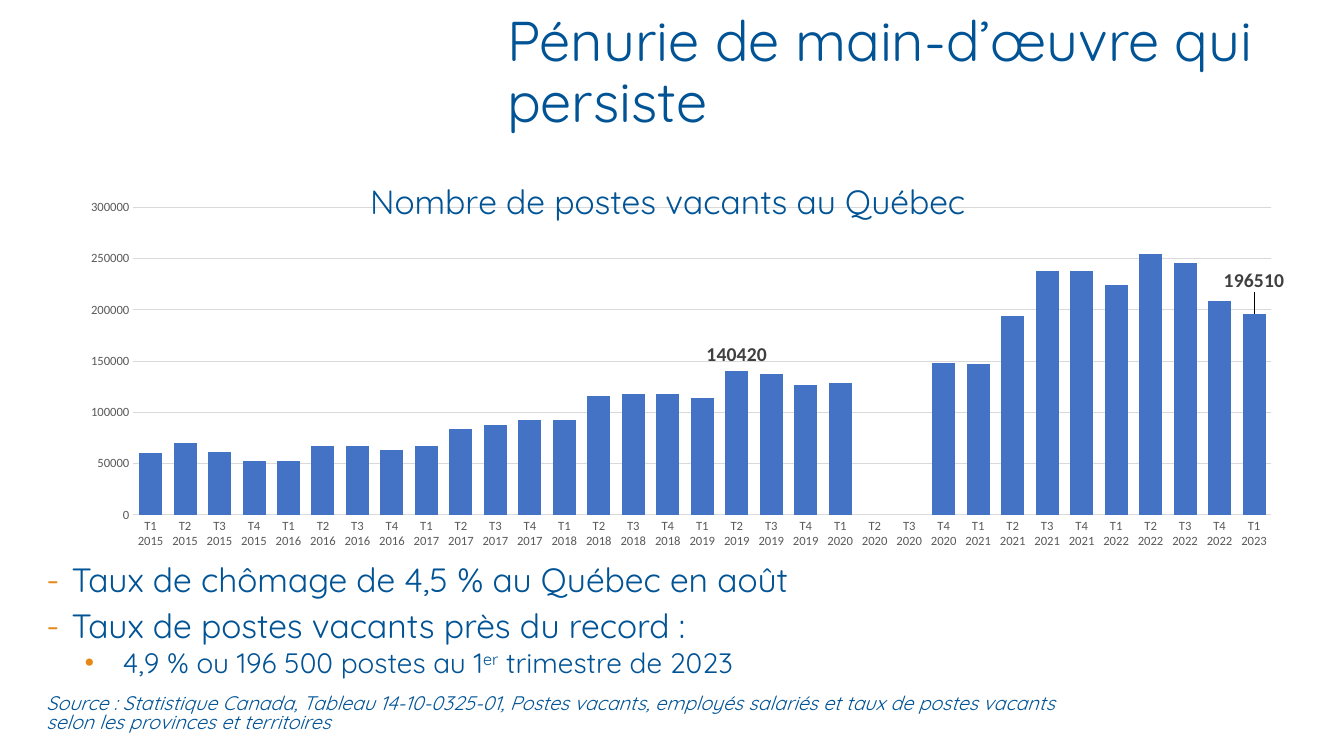
from dataclasses import dataclass

from lxml import etree
from pptx import Presentation
from pptx.chart.data import CategoryChartData
from pptx.dml.color import RGBColor
from pptx.enum.chart import XL_CHART_TYPE, XL_LABEL_POSITION, XL_TICK_MARK
from pptx.enum.text import MSO_ANCHOR, MSO_AUTO_SIZE, PP_ALIGN
from pptx.oxml import parse_xml
from pptx.oxml.ns import nsdecls, qn
from pptx.util import Inches, Pt

COLUMNS = XL_CHART_TYPE.COLUMN_CLUSTERED
OUTSIDE_END = XL_LABEL_POSITION.OUTSIDE_END
NO_TICK = XL_TICK_MARK.NONE
TOP, MIDDLE = MSO_ANCHOR.TOP, MSO_ANCHOR.MIDDLE
NO_AUTOFIT = MSO_AUTO_SIZE.NONE
LEFT = PP_ALIGN.LEFT


@dataclass(frozen=True)
class Theme:
    heading_font: str = "Quicksand"
    chart_font: str = "Calibri"
    blue: str = "005395"
    orange: str = "E58818"
    bar: str = "4472C4"
    grid: str = "D9D9D9"
    axis_text: str = "595959"
    label_text: str = "404040"
    black: str = "000000"
    white: str = "FFFFFF"
    title_size: int = 40
    bullet_size: int = 24
    sub_bullet_size: int = 20
    source_size: int = 14
    chart_size: int = 10
    axis_size: int = 9
    label_size: int = 14


THEME = Theme()

VACANCIES = [
    60505, 70300, 61445, 52205,
    52930, 66975, 66785, 63430,
    67720, 83820, 87435, 92455,
    92850, 116335, 118405, 117865,
    114215, 140420, 137530, 126730,
    128410, None, None, 148460,
    146865, 194145, 238050, 238140,
    224370, 254475, 246230, 208795,
    196510,
]
QUARTERS = [f"T{i % 4 + 1} {2015 + i // 4}" for i in range(len(VACANCIES))]
LABELLED_QUARTERS = ("T2 2019", "T1 2023")

# Text pieces, size, level, left margin, hanging, bullet, space before, space after
BODY = [
    (["Taux de chômage de 4,5 % au Québec en août"],
     THEME.bullet_size, 0, 0.25, 0.25, "-", 0, 0),
    (["Taux de postes vacants près du record :"],
     THEME.bullet_size, 0, 0.25, 0.25, "-", 10, 0),
    (["4,9 % ou 196 500 postes au 1", "er", " trimestre de 2023"],
     THEME.sub_bullet_size, 1, 0.76, 0.38, "•", 5, 6),
    (["Source : Statistique Canada, Tableau 14-10-0325-01, Postes vacants, "
      "employés salariés et taux de postes vacants \vselon les provinces et territoires"],
     THEME.source_size, 1, 0, 0, None, 6, 0),
]


def style_font(font, name, size, color):
    font.name = name
    font.size = Pt(size)
    font.color.rgb = RGBColor.from_string(color)


def place(shape, left, top, width, height):
    shape.left, shape.top = Inches(left), Inches(top)
    shape.width, shape.height = Inches(width), Inches(height)


def set_bullet(paragraph, left, hanging, character):
    properties = paragraph._p.get_or_add_pPr()
    properties.set("marL", str(Inches(left)))
    properties.set("indent", str(-Inches(hanging)))
    if character is None:
        etree.SubElement(properties, qn("a:buNone"))
        return
    color = etree.SubElement(properties, qn("a:buClr"))
    etree.SubElement(color, qn("a:srgbClr")).set("val", THEME.orange)
    etree.SubElement(properties, qn("a:buFont")).set("typeface", THEME.heading_font)
    etree.SubElement(properties, qn("a:buChar")).set("char", character)


def fill_title(title):
    place(title, 4.93, 0.16, 8.29, 1.15)
    frame = title.text_frame
    frame.text = "Pénurie de main-d’œuvre qui persiste"
    frame.word_wrap = True
    frame.auto_size = NO_AUTOFIT
    frame.vertical_anchor = MIDDLE
    paragraph = frame.paragraphs[0]
    paragraph.alignment = LEFT
    paragraph.line_spacing = 0.9
    style_font(paragraph.runs[0].font, THEME.heading_font, THEME.title_size, THEME.blue)


def fill_body(body):
    place(body, 0.36, 5.57, 10.8, 1.77)
    body.fill.solid()
    body.fill.fore_color.rgb = RGBColor.from_string(THEME.white)
    frame = body.text_frame
    frame.word_wrap = True
    frame.auto_size = NO_AUTOFIT
    frame.vertical_anchor = TOP
    for index, (pieces, size, level, left, hanging, bullet, before, after) in enumerate(BODY):
        paragraph = frame.add_paragraph() if index else frame.paragraphs[0]
        paragraph.text = pieces[0]
        for piece in pieces[1:]:
            paragraph.add_run().text = piece
        set_bullet(paragraph, left, hanging, bullet)
        paragraph.level = level
        paragraph.line_spacing = 0.8
        paragraph.space_before, paragraph.space_after = Pt(before), Pt(after)
        for run in paragraph.runs:
            style_font(run.font, THEME.heading_font, size, THEME.blue)
            run.font.italic = size == THEME.source_size
            if run.text == "er":
                run._r.get_or_add_rPr().set("baseline", "30000")


def set_layout(parent, index, settings):
    """Give a chart part a manual layout, as the child at the given index."""
    for old_layout in parent.findall(qn("c:layout")):
        parent.remove(old_layout)
    layout = etree.Element(qn("c:layout"))
    manual = etree.SubElement(layout, qn("c:manualLayout"))
    for name, value in settings.items():
        etree.SubElement(manual, qn(f"c:{name}")).set("val", str(value))
    parent.insert(index, layout)


def style_axis(axis):
    axis.major_tick_mark = axis.minor_tick_mark = NO_TICK
    style_font(axis.tick_labels.font, THEME.chart_font, THEME.axis_size, THEME.axis_text)


def style_line(line):
    line.color.rgb = RGBColor.from_string(THEME.grid)
    line.width = Pt(0.75)


def label_points(series):
    series.data_labels.show_value = False
    for quarter in LABELLED_QUARTERS:
        label = series.points[QUARTERS.index(quarter)].data_label
        style_font(label.font, THEME.chart_font, THEME.label_size, THEME.label_text)
        label.font.bold = True
        label.position = OUTSIDE_END
    # Leader line from the raised last label to its column
    series.data_labels._element.append(parse_xml(
        f'<c:extLst {nsdecls("c", "a")}><c:ext uri="{{CE6537A1-D6FC-4f65-9D91-7224C49458BB}}" '
        'xmlns:c15="http://schemas.microsoft.com/office/drawing/2012/chart">'
        '<c15:showLeaderLines val="1"/></c:ext></c:extLst>'))


def add_vacancy_chart(slide):
    data = CategoryChartData()
    data.categories = QUARTERS
    data.add_series("Postes vacants", VACANCIES)
    chart = slide.shapes.add_chart(
        COLUMNS, Inches(0.36), Inches(1.48), Inches(12.5), Inches(4.29), data).chart
    style_font(chart.font, THEME.chart_font, THEME.chart_size, THEME.black)
    chart.has_legend = False

    # Title
    title_frame = chart.chart_title.text_frame
    title_frame.text = "Nombre de postes vacants au Québec"
    title_font = title_frame.paragraphs[0].runs[0].font
    style_font(title_font, THEME.heading_font, THEME.bullet_size, THEME.blue)
    title_font.bold = False

    # Axes
    for axis in (chart.category_axis, chart.value_axis):
        style_axis(axis)
    style_line(chart.category_axis.format.line)
    chart.value_axis.format.line.fill.background()
    chart.value_axis.minimum_scale, chart.value_axis.maximum_scale = 0, 300000
    chart.value_axis.major_unit = 50000
    style_line(chart.value_axis.major_gridlines.format.line)

    # Columns and labels
    plot = chart.plots[0]
    plot.gap_width = 50
    plot.vary_by_categories = False
    series = plot.series[0]
    series.format.fill.solid()
    series.format.fill.fore_color.rgb = RGBColor.from_string(THEME.bar)
    label_points(series)

    # Positions inside the chart
    root = chart._chartSpace
    set_layout(root.xpath("c:chart/c:title")[0], 1,
               {"xMode": "edge", "yMode": "edge", "x": 0.26, "y": 0.05})
    set_layout(root.xpath("c:chart/c:plotArea")[0], 0,
               {"layoutTarget": "inner", "xMode": "edge", "yMode": "edge",
                "x": 0.077, "y": 0.135, "w": 0.903, "h": 0.711})
    set_layout(root.xpath(".//c:dLbl")[-1], 1, {"x": 0, "y": -0.04})


def main():
    presentation = Presentation()
    presentation.slide_width, presentation.slide_height = Inches(13.33), Inches(7.5)
    slide = presentation.slides.add_slide(presentation.slide_layouts[1])
    body = slide.placeholders[1]
    fill_title(slide.shapes.title)
    add_vacancy_chart(slide)
    fill_body(body)
    # The text panel lies over the lower edge of the chart
    slide.shapes._spTree.append(body._element)
    presentation.save("out.pptx")


if __name__ == "__main__":
    main()
